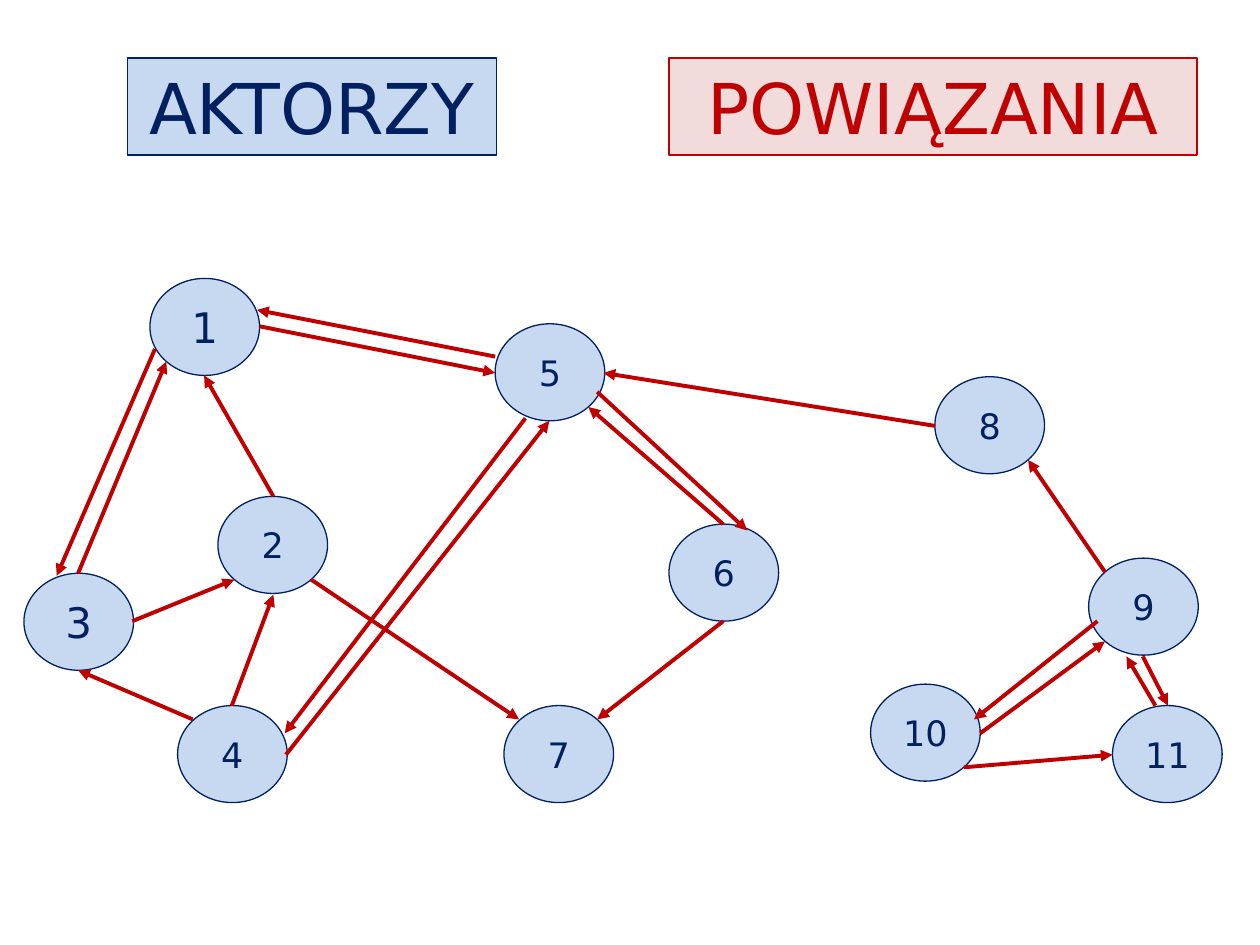
import pptx
import pptx.dml.color
import pptx.enum.shapes
import pptx.enum.text
import pptx.oxml
import pptx.oxml.ns
import pptx.util
from pptx.util import Inches

FONT = "DejaVu Sans"
NAVY, BLUE = "002060", "C6D9F1"
RED, PINK = "C00000", "F2DCDB"
NODE_W, NODE_H = 0.87, 0.77

HEADINGS = [
    ("AKTORZY", 1.01, 2.93, NAVY, BLUE),
    ("POWIĄZANIA", 5.31, 4.19, RED, PINK),
]

ACTORS = [
    ("1", 1.19, 0.21, 24),
    ("2", 1.73, 1.94, 20),
    ("3", 0.19, 2.55, 24),
    ("4", 1.41, 3.6, 20),
    ("5", 3.93, 0.57, 20),
    ("6", 5.31, 2.16, 20),
    ("7", 4, 3.6, 20),
    ("8", 7.42, 0.99, 20),
    ("9", 8.64, 2.43, 20),
    ("10", 6.91, 3.43, 20),
    ("11", 8.83, 3.6, 20),
]

LINKS = [
    ((2.06, 0.59), (3.93, 0.96)),
    ((3.93, 0.83), (2.04, 0.46)),
    ((1.23, 0.77), (0.45, 2.57)),
    ((0.62, 2.55), (1.32, 0.87)),
    ((2.17, 1.94), (1.62, 0.98)),
    ((1.05, 2.93), (1.86, 2.6)),
    ((1.84, 3.6), (2.17, 2.72)),
    ((1.53, 3.71), (0.62, 3.32)),
    ((2.47, 2.6), (4.12, 3.71)),
    ((2.27, 3.99), (4.36, 1.34)),
    ((4.17, 1.32), (2.26, 3.82)),
    ((5.74, 2.93), (4.74, 3.71)),
    ((5.74, 2.16), (4.67, 1.23)),
    ((4.74, 1.11), (5.93, 2.21)),
    ((7.42, 1.38), (4.79, 0.96)),
    ((8.77, 2.54), (8.16, 1.65)),
    ((9.07, 3.21), (9.27, 3.6)),
    ((9.17, 3.6), (8.94, 3.21)),
    ((7.78, 3.82), (8.77, 3.09)),
    ((8.71, 2.93), (7.73, 3.71)),
    ((7.65, 4.09), (8.83, 3.99)),
]


def rgb(value):
    return pptx.dml.color.RGBColor.from_string(value)


def write(sp, text, size=20, color=NAVY, anchor="MIDDLE"):
    tf = sp.text_frame
    tf.word_wrap = True
    tf.vertical_anchor = getattr(pptx.enum.text.MSO_ANCHOR, anchor)
    p = tf.paragraphs[0]
    p.alignment = pptx.enum.text.PP_ALIGN.CENTER
    r = p.add_run()
    r.text = text
    r.font.name = FONT
    r.font.size = pptx.util.Pt(size)
    r.font.color.rgb = rgb(color)


def add_box(s, kind, left, top, width, height, fill, line):
    shape_type = getattr(pptx.enum.shapes.MSO_SHAPE, kind)
    sp = s.shapes.add_shape(shape_type, Inches(left), Inches(top),
                            Inches(width), Inches(height))
    sp.shadow.inherit = False
    sp.fill.solid()
    sp.fill.fore_color.rgb = rgb(fill)
    sp.line.color.rgb = rgb(line)
    sp.line.width = pptx.util.Pt(0.75)
    return sp


def add_arrow(s, x1, y1, x2, y2):
    c = s.shapes.add_connector(pptx.enum.shapes.MSO_CONNECTOR.STRAIGHT,
                               Inches(x1), Inches(y1), Inches(x2), Inches(y2))
    c.line.color.rgb = rgb(RED)
    c.line.width = pptx.util.Pt(2.25)
    ns = pptx.oxml.ns.nsdecls("a")
    c.line._get_or_add_ln().append(
        pptx.oxml.parse_xml(f'<a:tailEnd {ns} type="triangle"/>'))
    c._element.spPr.append(pptx.oxml.parse_xml(f"<a:effectLst {ns}/>"))


def add_headings(s, left, top, height):
    for text, x, width, color, fill in HEADINGS:
        sp = add_box(s, "RECTANGLE", left + x, top, width, height, fill, color)
        write(sp, text, size=40, color=color, anchor="TOP")


def add_network(s, left, top):
    for label, x, y, size in ACTORS:
        sp = add_box(s, "OVAL", left + x, top + y, NODE_W, NODE_H, BLUE, NAVY)
        write(sp, label, size=size)
    for (x1, y1), (x2, y2) in LINKS:
        add_arrow(s, left + x1, top + y1, left + x2, top + y2)


def main():
    prs = pptx.Presentation()
    prs.slide_width = Inches(10)
    prs.slide_height = Inches(7.5)
    s = prs.slides.add_slide(prs.slide_layouts[6])
    add_headings(s, 0, 0.46, 0.77)
    add_network(s, 0, 2)
    prs.save("out.pptx")


if __name__ == "__main__":
    main()
